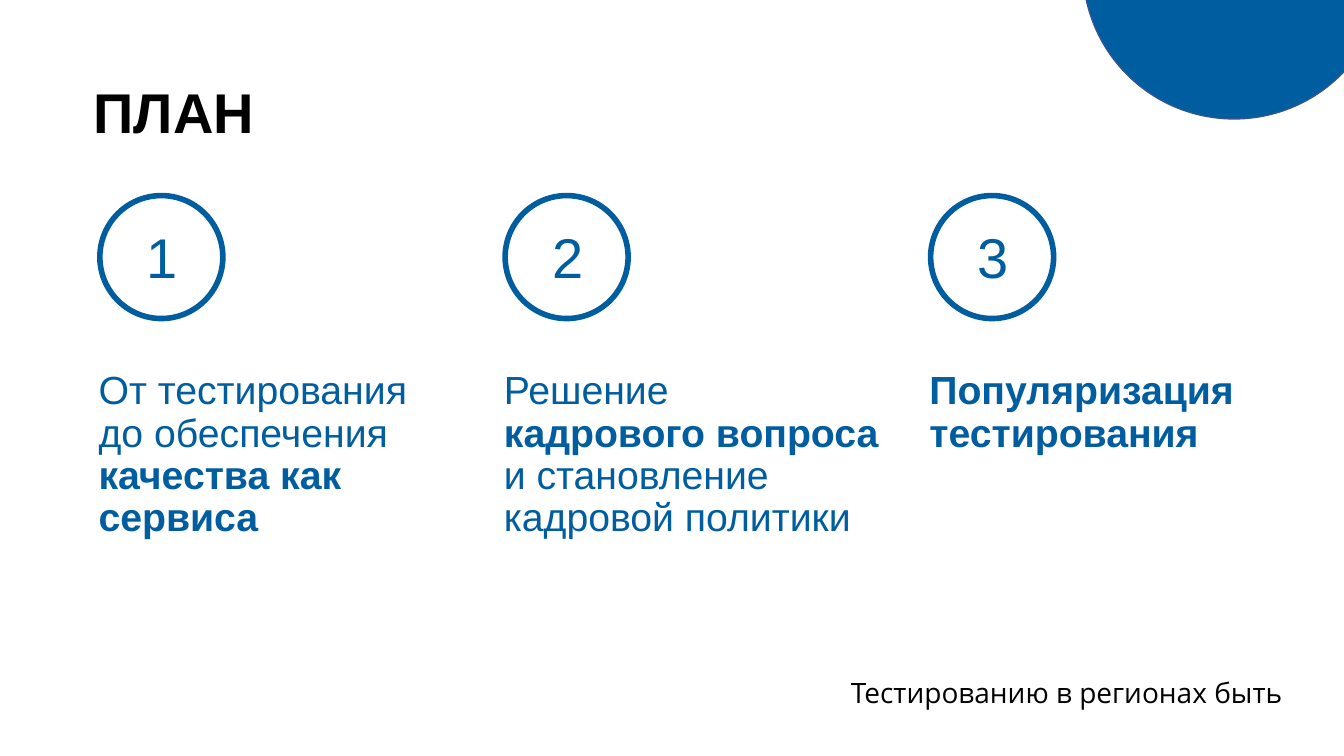
from dataclasses import dataclass

from pptx import Presentation
from pptx import util as u
from pptx.dml.color import RGBColor
from pptx.enum import shapes, text


@dataclass(frozen=True)
class Theme:
    """Colours, fonts and type sizes of the slide."""
    blue: str = "005EA0"
    edge: str = "325491"
    black: str = "000000"
    font: str = "Arial"
    footer_font: str = "Open Sans"
    heading: int = 40
    body: int = 28
    footer: int = 20


T = Theme()
W, H = 13.33, 7.5
RING = 1.22
ITEMS = [
    (0.88, 3.45, [[("От тестирования до обеспечения ", False), ("качества как сервиса", True)]]),
    (4.9, 3.97, [[("Решение", False)],
                 [("кадрового вопроса ", True), ("и становление кадровой политики", False)]]),
    (9.12, 4.1, [[("Популяризация тестирования", True)]]),
]


def add_text(s, box, lines, size, color, font=T.font, spacing=1.0,
             align=text.PP_ALIGN.LEFT, anchor=text.MSO_ANCHOR.TOP):
    """Add one paragraph whose lines are lists of (wording, bold) runs."""
    tf = s.shapes.add_textbox(*map(u.Inches, box)).text_frame
    tf.word_wrap = True
    tf.vertical_anchor = anchor
    p = tf.paragraphs[0]
    p.alignment, p.line_spacing = align, spacing
    for i, line in enumerate(lines):
        if i:
            p.add_line_break()
        for wording, bold in line:
            r = p.add_run()
            r.text = wording
            r.font.name, r.font.size, r.font.bold = font, u.Pt(size), bold
            r.font.color.rgb = RGBColor.from_string(color)


def add_circle(s, left, top, size, line, width, fill=None):
    """Add an outlined circle, filled when a colour is given."""
    sp = s.shapes.add_shape(shapes.MSO_SHAPE.OVAL, *map(u.Inches, (left, top, size, size)))
    sp.shadow.inherit = False
    sp.line.color.rgb = RGBColor.from_string(line)
    sp.line.width = u.Pt(width)
    if fill:
        sp.fill.solid()
        sp.fill.fore_color.rgb = RGBColor.from_string(fill)
    else:
        sp.fill.background()


def add_frame(s):
    """Add the corner disc, the heading and the footer."""
    add_circle(s, W - 2.59, -1.82, 3, T.edge, 1, T.blue)
    add_text(s, (7.62, H - 0.85, 5.2, 0.4), [[("Тестированию в регионах быть", False)]],
             T.footer, T.black, T.footer_font, 1.13,
             text.PP_ALIGN.RIGHT, text.MSO_ANCHOR.MIDDLE)
    add_text(s, (0.83, 0.42, 11.5, 1.45), [[("ПЛАН", True)]], T.heading, T.black,
             spacing=0.9, anchor=text.MSO_ANCHOR.MIDDLE)


def add_item(s, box, number, lines):
    """Add a ringed number with its wording below."""
    x, y, w, h = box
    add_circle(s, x + 0.11, y, RING, T.blue, 4)
    add_text(s, (x + 0.48, y + 0.22, 0.5, 0.77), [[(str(number), False)]], T.heading, T.blue)
    add_text(s, (x, y + 1.69, w, h - 1.69), lines, T.body, T.blue, spacing=0.9)


def main():
    """Build and save the slide."""
    prs = Presentation()
    prs.slide_width, prs.slide_height = u.Inches(W), u.Inches(H)
    s = prs.slides.add_slide(prs.slide_layouts[6])
    add_frame(s)
    for number, (x, w, lines) in enumerate(ITEMS, 1):
        add_item(s, (x, 1.94, w, 4.96), number, lines)
    prs.save("out.pptx")


if __name__ == "__main__":
    main()
